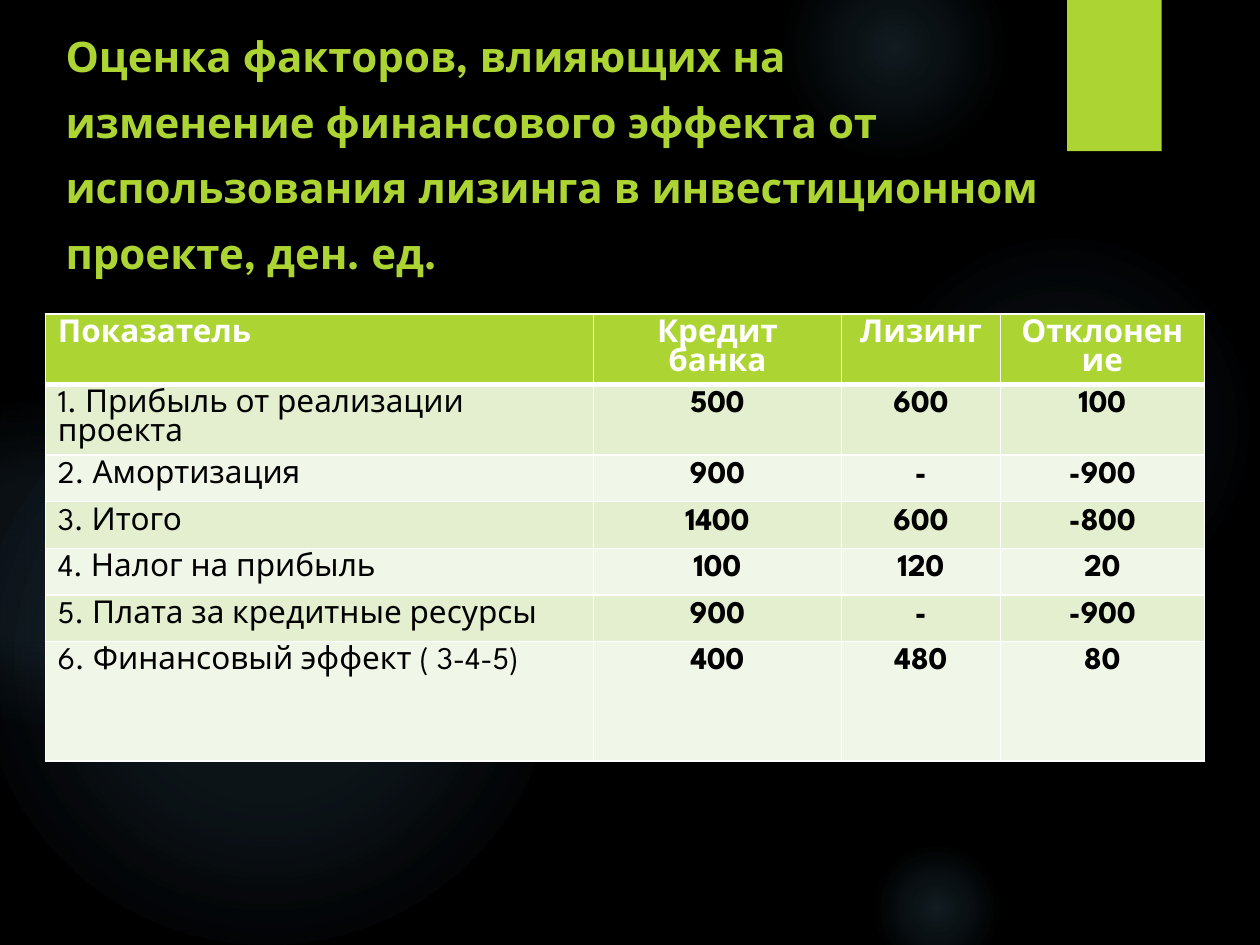
import pptx
import pptx.util
import pptx.oxml
import pptx.oxml.ns
from pptx.dml.color import RGBColor
from pptx.enum.shapes import MSO_SHAPE
from pptx.enum.text import MSO_ANCHOR, MSO_AUTO_SIZE, PP_ALIGN
from pptx.util import Inches

FONT = "League Spartan"
BLACK = RGBColor(0x00, 0x00, 0x00)
WHITE = RGBColor(0xFF, 0xFF, 0xFF)
LIME = RGBColor(0xAC, 0xD4, 0x33)
GLOW = RGBColor(0x7A, 0xC4, 0xF0)
BANDS = [RGBColor(0xE3, 0xEF, 0xCE), RGBColor(0xF1, 0xF7, 0xE8)]

TITLE = ("Оценка факторов, влияющих на изменение финансового эффекта от "
         "использования лизинга в инвестиционном проекте, ден. ед.")
HEADER = ["Показатель", "Кредит банка", "Лизинг", "Отклонение"]
INDICATORS = [
    ["1. Прибыль от реализации проекта", "500", "600", "100"],
    ["2. Амортизация", "900", "-", "-900"],
    ["3. Итого", "1400", "600", "-800"],
    ["4. Налог на прибыль", "100", "120", "20"],
    ["5. Плата за кредитные ресурсы", "900", "-", "-900"],
    ["6. Финансовый эффект ( 3-4-5)", "400", "480", "80"],
]
COLUMN_WIDTHS = [4.35, 1.97, 1.26, 1.62]
ROW_HEIGHTS = [0.37] * 6 + [0.95]

# left, top, diameter, gradient stops as (position %, opacity %)
GLOWS = [
    (6.89, 1.83, 3.08, [(0, 7), (36, 6), (69, 0)]),
    (6.22, -0.5, 1.75, [(0, 14), (36, 7), (73, 0)]),
    (6.89, 6.67, 1.08, [(0, 14), (36, 7), (66, 0)]),
    (-0.17, 2.92, 4.58, [(0, 11), (36, 10), (75, 0)]),
    (-0.92, 3.17, 2.58, [(0, 8), (36, 8), (72, 0)]),
]
NS = pptx.oxml.ns.nsdecls("a")


def add_glow(slide, left, top, diameter, stops):
    glow = slide.shapes.add_shape(
        MSO_SHAPE.OVAL, *map(Inches, (left, top, diameter, diameter)))
    glow.shadow.inherit = False
    glow.line.fill.background()
    stop_xml = "".join(
        f'<a:gs pos="{position * 1000}"><a:srgbClr val="{GLOW}">'
        f'<a:alpha val="{opacity * 1000}"/></a:srgbClr></a:gs>'
        for position, opacity in stops)
    gradient = pptx.oxml.parse_xml(
        f'<a:gradFill {NS} rotWithShape="1"><a:gsLst>{stop_xml}</a:gsLst>'
        '<a:path path="circle"><a:fillToRect l="50000" t="50000" r="50000" '
        'b="50000"/></a:path></a:gradFill>')
    glow._element.spPr.find(pptx.oxml.ns.qn("a:prstGeom")).addnext(gradient)


def add_tab(slide):
    """Add the lime tab hanging from the top edge, with a soft shadow."""
    tab = slide.shapes.add_shape(
        MSO_SHAPE.RECTANGLE, *map(Inches, (8.47, 0, 0.75, 1.2)))
    tab.shadow.inherit = False
    tab.fill.solid()
    tab.fill.fore_color.rgb = LIME
    tab.line.fill.background()
    effects = tab._element.spPr.find(pptx.oxml.ns.qn("a:effectLst"))
    effects.append(pptx.oxml.parse_xml(
        f'<a:outerShdw {NS} blurRad="{pptx.util.Pt(3)}" '
        f'dist="{pptx.util.Pt(2)}" dir="5400000" rotWithShape="0">'
        f'<a:srgbClr val="{BLACK}"><a:alpha val="45000"/></a:srgbClr>'
        '</a:outerShdw>'))


def add_run(paragraph, text, size, color, bold):
    run = paragraph.add_run()
    run.text = text
    run.font.name = FONT
    run.font.size = pptx.util.Pt(size)
    run.font.bold = bold
    run.font.color.rgb = color


def fill_title(slide):
    title = slide.shapes.title
    title.left, title.top, title.width, title.height = map(
        Inches, (0.42, 0.31, 7.97, 1.71))
    frame = title.text_frame
    frame.word_wrap = True
    frame.auto_size = MSO_AUTO_SIZE.NONE
    frame.vertical_anchor = MSO_ANCHOR.MIDDLE
    paragraph = frame.paragraphs[0]
    paragraph.alignment = PP_ALIGN.LEFT
    paragraph.line_spacing = 1.3
    add_run(paragraph, TITLE, 24, LIME, True)
    slide.shapes._spTree.append(title._element)  # in front of the glows


def set_borders(cell, widths):
    properties = cell._tc.get_or_add_tcPr()
    for index, (side, width) in enumerate(widths.items()):
        properties.insert(index, pptx.oxml.parse_xml(
            f'<a:ln{side} {NS} w="{pptx.util.Pt(width)}"><a:solidFill>'
            f'<a:srgbClr val="{WHITE}"/></a:solidFill></a:ln{side}>'))


def add_indicator_table(slide):
    rows = [HEADER] + INDICATORS
    table = slide.shapes.add_table(
        len(rows), len(HEADER), Inches(0.36), Inches(2.49),
        Inches(sum(COLUMN_WIDTHS)), Inches(sum(ROW_HEIGHTS))).table
    for column, width in zip(table.columns, COLUMN_WIDTHS):
        column.width = Inches(width)
    for row, height in zip(table.rows, ROW_HEIGHTS):
        row.height = Inches(height)

    for r, texts in enumerate(rows):
        is_header = r == 0
        for c, text in enumerate(texts):
            cell = table.cell(r, c)
            cell.fill.solid()
            cell.fill.fore_color.rgb = LIME if is_header else BANDS[(r - 1) % 2]
            set_borders(cell, {"L": 1, "R": 1, "T": 3 if r == 1 else 1,
                               "B": 3 if is_header else 1})
            paragraph = cell.text_frame.paragraphs[0]
            paragraph.alignment = PP_ALIGN.CENTER if c else PP_ALIGN.LEFT
            add_run(paragraph, text, 18, WHITE if is_header else BLACK,
                    is_header or c > 0)


def main():
    presentation = pptx.Presentation()
    presentation.slide_width = Inches(10)
    presentation.slide_height = Inches(7.5)
    slide = presentation.slides.add_slide(presentation.slide_layouts[5])
    slide.background.fill.solid()
    slide.background.fill.fore_color.rgb = BLACK
    for glow in GLOWS:
        add_glow(slide, *glow)
    add_tab(slide)
    fill_title(slide)
    add_indicator_table(slide)
    presentation.save("out.pptx")


if __name__ == "__main__":
    main()
